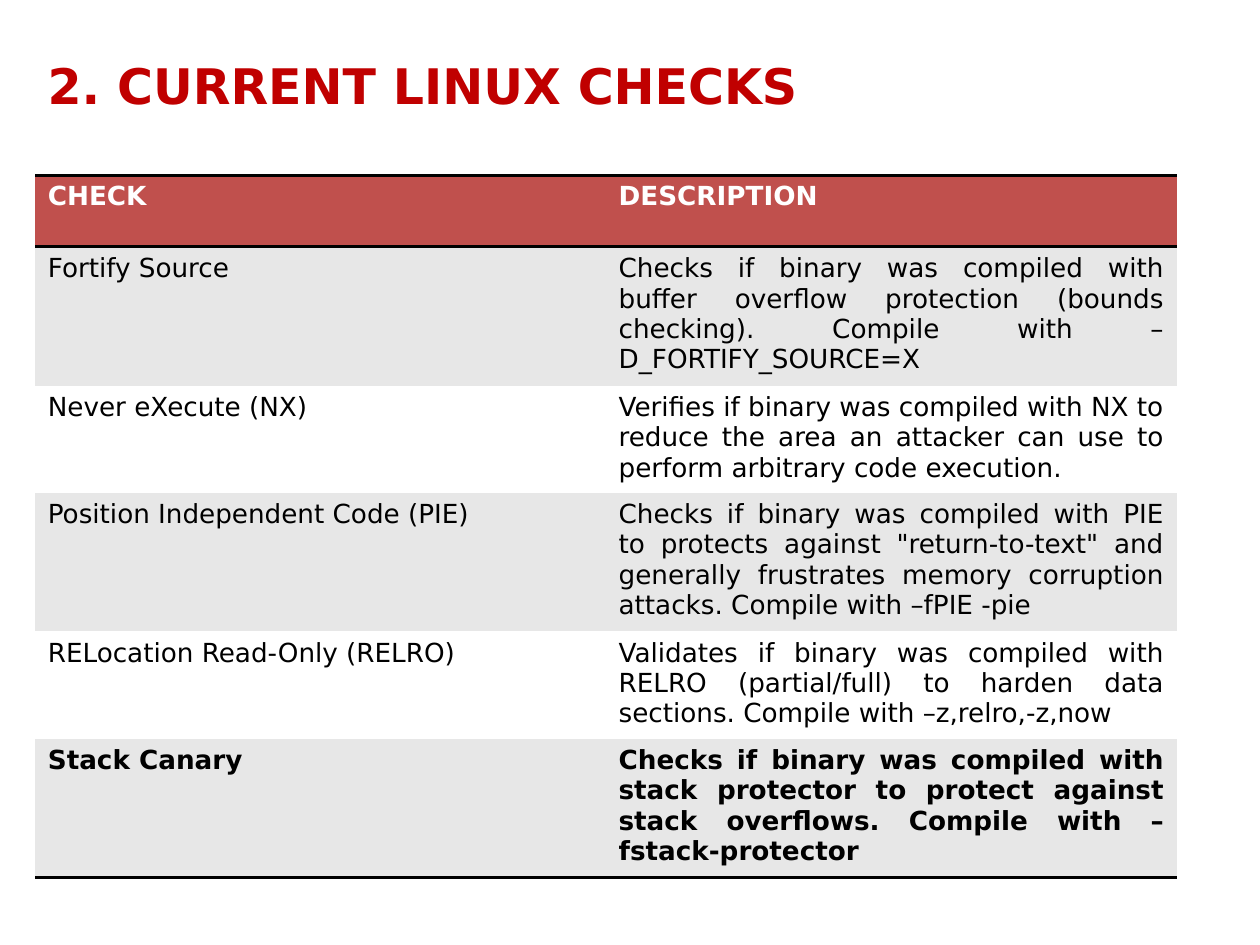
"""Build the slide that lists the current Linux binary checks."""
import pptx
import pptx.dml.color
import pptx.enum.text
import pptx.oxml
import pptx.oxml.ns
import pptx.util

TITLE = "2. CURRENT LINUX CHECKS"
ROWS = [
    ("CHECK", "DESCRIPTION"),
    ("Fortify Source",
     "Checks if binary was compiled with buffer overflow protection (bounds checking). "
     "Compile with –D_FORTIFY_SOURCE=X"),
    ("Never eXecute (NX)",
     "Verifies if binary was compiled with NX to reduce the area an attacker can use "
     "to perform arbitrary code execution."),
    ("Position Independent Code (PIE)",
     "Checks if binary was compiled with PIE to protects against \"return-to-text\" and "
     "generally frustrates memory corruption attacks. Compile with –fPIE -pie"),
    ("RELocation Read-Only (RELRO)",
     "Validates if binary was compiled with RELRO (partial/full) to harden data sections. "
     "Compile with –z,relro,-z,now"),
    ("Stack Canary",
     "Checks if binary was compiled with stack protector to protect against stack overflows. "
     "Compile with –fstack-protector"),
]
THEME = {
    "font": "DejaVu Sans", "title_size": 28, "body_size": 15, "rule_width": 2,
    "title": "C00000", "header": "C0504D", "header_text": "FFFFFF",
    "text": "000000", "rule": "000000", "bands": ("FFFFFF", "E7E7E7"),
}
WIDTH, HEIGHT = 10, 7.5
LEFT, TITLE_TOP, TITLE_WIDTH, TITLE_HEIGHT = 0.28, 0.13, 9, 1.08
TABLE_TOP, COLUMN_WIDTH, ROW_HEIGHT = 1.39, 4.53, 0.57


def inches(*values):
    """Convert numbers to inch lengths."""
    return [pptx.util.Inches(value) for value in values]


def write(frame, text, *, size, color, bold=False, align=pptx.enum.text.PP_ALIGN.LEFT):
    """Put one formatted paragraph in a text frame."""
    para = frame.paragraphs[0]
    para.alignment = align
    span = para.add_run()
    span.text = text
    span.font.name = THEME["font"]
    span.font.size = pptx.util.Pt(size)
    span.font.bold = bold
    span.font.color.rgb = pptx.dml.color.RGBColor.from_string(color)


def set_borders(cell, ruled):
    """Draw the ruled sides of a cell and clear the others."""
    for side in "LRTB":
        paint = (f'<a:solidFill><a:srgbClr val="{THEME["rule"]}"/></a:solidFill>'
                 if side in ruled else "<a:noFill/>")
        width = pptx.util.Pt(THEME["rule_width"])
        cell._tc.get_or_add_tcPr().append(pptx.oxml.parse_xml(
            f'<a:ln{side} {pptx.oxml.ns.nsdecls("a")} w="{width}">{paint}</a:ln{side}>'))


def add_title(page):
    """Add the slide heading."""
    box = page.shapes.add_textbox(*inches(LEFT, TITLE_TOP, TITLE_WIDTH, TITLE_HEIGHT))
    box.text_frame.word_wrap = True
    box.text_frame.vertical_anchor = pptx.enum.text.MSO_ANCHOR.MIDDLE
    write(box.text_frame, TITLE, size=THEME["title_size"], color=THEME["title"], bold=True)


def add_checks(page):
    """Add the banded table of checks."""
    last = len(ROWS) - 1
    columns = len(ROWS[0])
    table = page.shapes.add_table(len(ROWS), columns, *inches(
        LEFT, TABLE_TOP, columns * COLUMN_WIDTH, len(ROWS) * ROW_HEIGHT)).table
    for index, texts in enumerate(ROWS):
        header = index == 0
        ruled = {0: "TB", 1: "T", last: "B"}.get(index, "")
        fill = THEME["header"] if header else THEME["bands"][index % 2]
        for column, text in enumerate(texts):
            cell = table.cell(index, column)
            set_borders(cell, ruled)
            cell.fill.solid()
            cell.fill.fore_color.rgb = pptx.dml.color.RGBColor.from_string(fill)
            write(cell.text_frame, text, size=THEME["body_size"],
                  color=THEME["header_text" if header else "text"],
                  bold=index in (0, last),
                  align=getattr(pptx.enum.text.PP_ALIGN, "LEFT" if header else "JUSTIFY"))


def main():
    """Create and save the deck."""
    deck = pptx.Presentation()
    deck.slide_width, deck.slide_height = inches(WIDTH, HEIGHT)
    page = deck.slides.add_slide(deck.slide_layouts[6])
    add_title(page)
    add_checks(page)
    deck.save("out.pptx")


if __name__ == "__main__":
    main()
